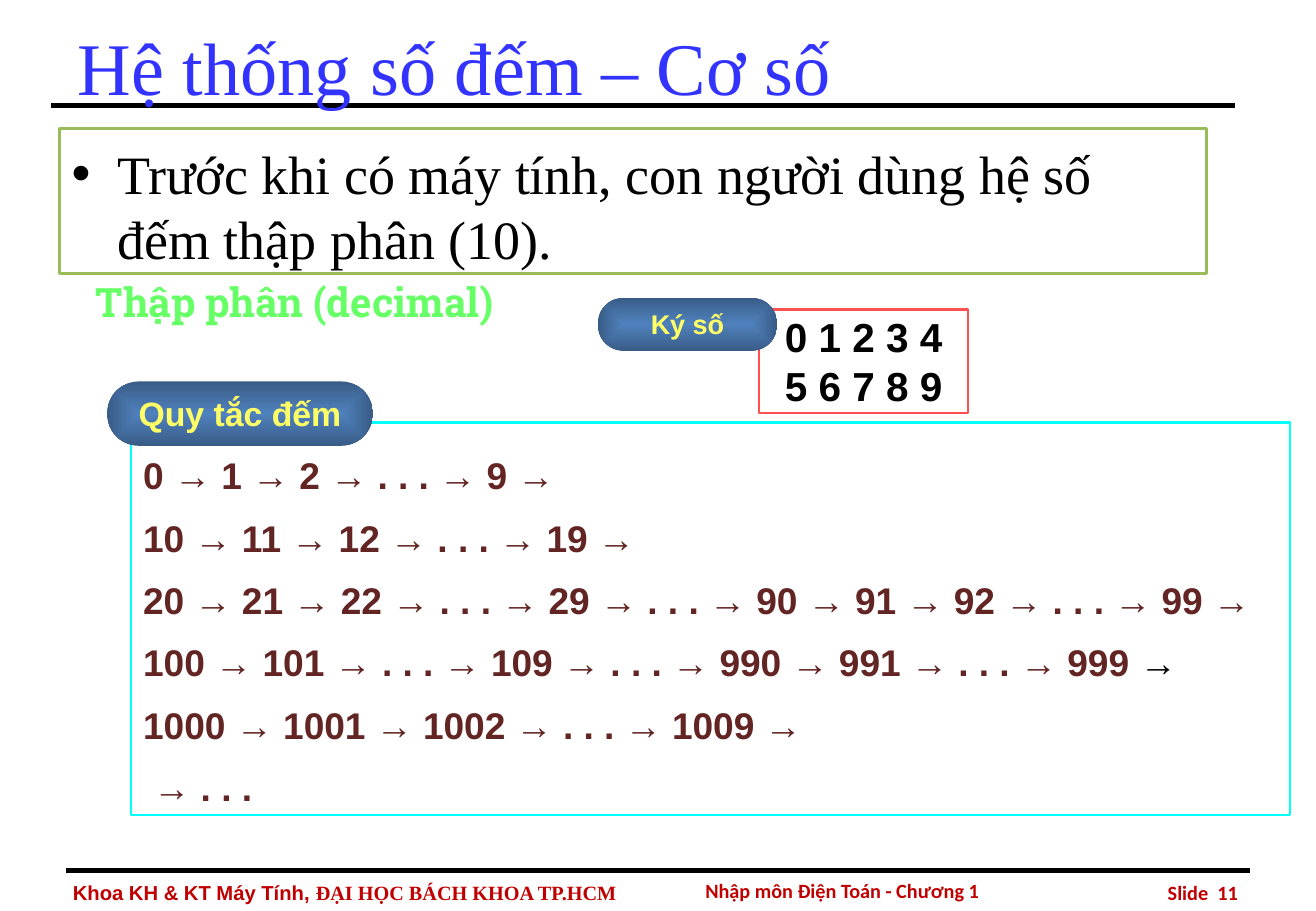
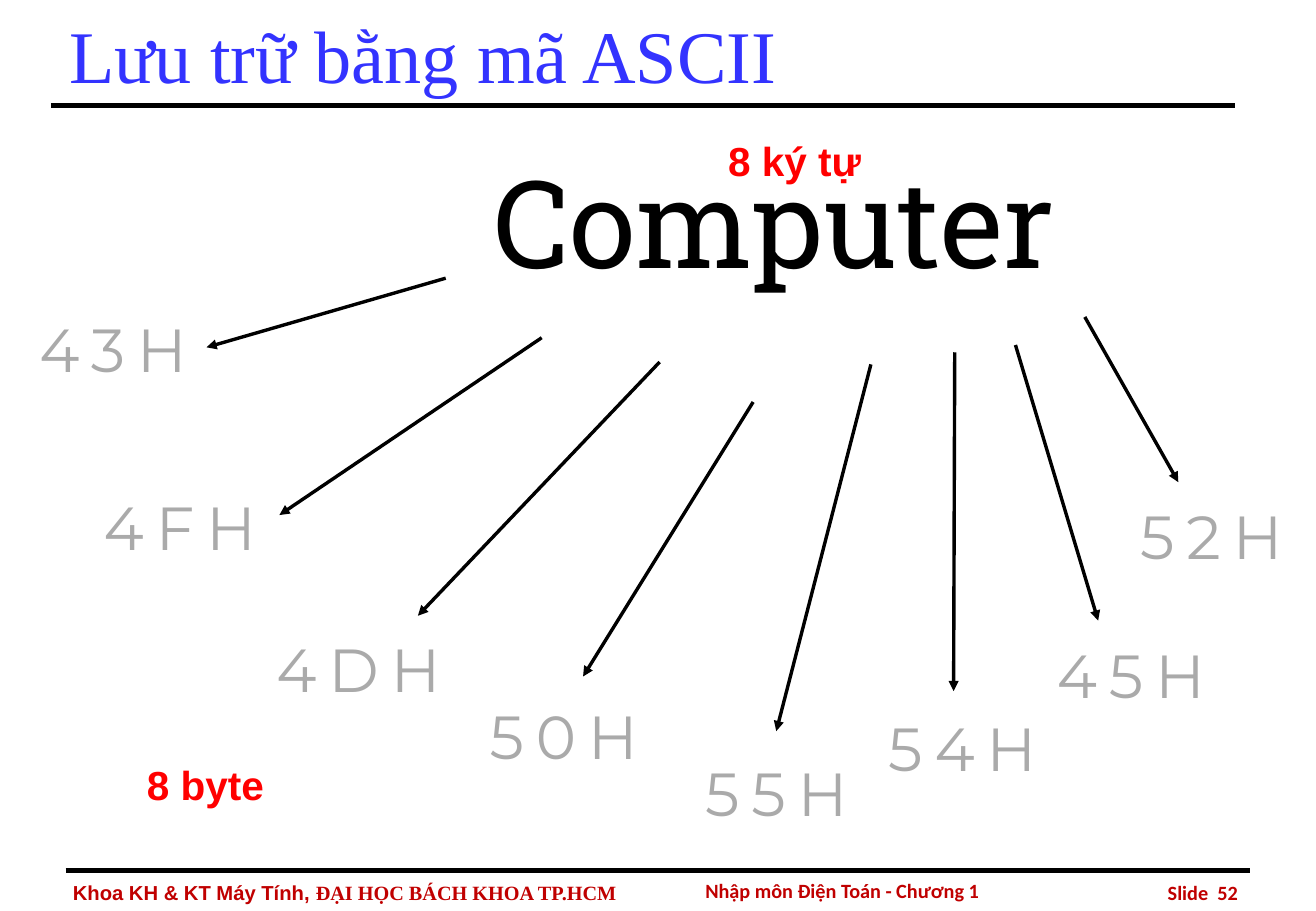
from dataclasses import dataclass
from typing import Optional

from lxml import etree
from pptx import Presentation
from pptx.dml import color as dml
from pptx.enum import shapes, text as txt
from pptx.oxml import ns
from pptx.util import Pt

BLACK = dml.RGBColor(0x00, 0x00, 0x00)
WHITE = dml.RGBColor(0xFF, 0xFF, 0xFF)
TITLE_BLUE = dml.RGBColor(0x33, 0x33, 0xFF)
FOOTER_RED = dml.RGBColor(0xC0, 0x00, 0x00)
CALLOUT_RED = dml.RGBColor(0xFF, 0x00, 0x00)
OLIVE = dml.RGBColor(0x9B, 0xBB, 0x59)
CORAL = dml.RGBColor(0xFF, 0x50, 0x50)
CYAN = dml.RGBColor(0x00, 0xFF, 0xFF)
MAROON = dml.RGBColor(0x63, 0x25, 0x23)
YELLOW = dml.RGBColor(0xFF, 0xFF, 0x66)
GREEN = dml.RGBColor(0x66, 0xFF, 0x66)
PILL_CENTRE = dml.RGBColor(0x4F, 0x81, 0xBD)
PILL_EDGE = dml.RGBColor(0x39, 0x5C, 0x87)
CODE_GREY = dml.RGBColor(0xAA, 0xAA, 0xAA)

SERIF, SANS, FOOTER_FACE = "Times New Roman", "Arial", "Calibri"
SLAB, CODE_FACE = "Roboto Slab", "Montserrat"
TIGHT = (1.4, 1.4, 1.4, 1.4)
NO_INSET = (0, 0, 0, 0)
INSET = (7.2, 3.6, 7.2, 3.6)
LEFT, CENTER, RIGHT = txt.PP_ALIGN.LEFT, txt.PP_ALIGN.CENTER, txt.PP_ALIGN.RIGHT
TOP, MIDDLE = txt.MSO_ANCHOR.TOP, txt.MSO_ANCHOR.MIDDLE


@dataclass(frozen=True)
class Box:
    left: float
    top: float
    width: float
    height: float

    def lengths(self) -> tuple:
        return Pt(self.left), Pt(self.top), Pt(self.width), Pt(self.height)


@dataclass(frozen=True)
class CharCode:
    label: str
    left: float
    top: float
    start: tuple
    tip: tuple


CHAR_CODES = (
    CharCode("43H", 28.1, 181.4, (264.2, 164.9), (122.4, 205.9)),
    CharCode("4FH", 67.7, 286.6, (321.1, 200.2), (165.6, 305.3)),
    CharCode("4DH", 173.5, 370.8, (391, 214.6), (247.7, 365)),
    CharCode("50H", 295.2, 410.4, (446.4, 238.3), (345.6, 401)),
    CharCode("55H", 421.2, 444.2, (516.2, 216), (460.1, 433.4)),
    CharCode("54H", 531.4, 417.6, (565.9, 208.8), (565.2, 409.7)),
    CharCode("45H", 631.4, 374.4, (601.9, 204.5), (650.9, 367.9)),
    CharCode("52H", 679, 292.3, (643, 187.9), (698.4, 285.8)),
)

COUNTING = (
    "0 → 1 → 2 → . . . → 9 →",
    "10 → 11 → 12 → . . . → 19 →",
    "20 → 21 → 22 → . . . → 29 → . . . → 90 → 91 → 92 → . . . → 99 →",
    "100 → 101 → . . . → 109 → . . . → 990 → 991 → . . . → 999 ",
    "1000 → 1001 → 1002 → . . . → 1009 →",
    " → . . .",
)


def write(frame, content: str, *, face: str, size: float, color, bold: bool = False,
          align=LEFT, spacing: Optional[float] = None, same_line: bool = False):
    paragraph = frame.paragraphs[-1]
    if paragraph.runs and not same_line:
        paragraph = frame.add_paragraph()
    paragraph.alignment = align
    paragraph.space_before = Pt(0)
    if spacing:
        paragraph.line_spacing = spacing
    run = paragraph.add_run()
    run.text = content
    run.font.name, run.font.size, run.font.bold = face, Pt(size), bold
    run.font.color.rgb = color
    return run


def set_frame(shape, insets: tuple = INSET, anchor=TOP, wrap: bool = True):
    frame = shape.text_frame
    frame.auto_size = txt.MSO_AUTO_SIZE.NONE
    frame.word_wrap = wrap
    frame.vertical_anchor = anchor
    (frame.margin_left, frame.margin_top,
     frame.margin_right, frame.margin_bottom) = map(Pt, insets)
    return frame


def label(slide, box: Box, insets: tuple = INSET, anchor=TOP, wrap: bool = True):
    return set_frame(slide.shapes.add_textbox(*box.lengths()), insets, anchor, wrap)


def outlined(slide, box: Box, color, insets: tuple = TIGHT):
    panel = slide.shapes.add_shape(shapes.MSO_SHAPE.RECTANGLE, *box.lengths())
    panel.shadow.inherit = False
    panel.fill.background()
    panel.line.color.rgb = color
    panel.line.width = Pt(1.5)
    return set_frame(panel, insets)


def set_gradient(fill, first, last) -> None:
    fill.gradient()
    for stop, color in zip(fill.gradient_stops, (first, last)):
        stop.color.rgb = color


def pill(slide, box: Box, content: str, size: float) -> None:
    badge = slide.shapes.add_shape(shapes.MSO_SHAPE.ROUNDED_RECTANGLE, *box.lengths())
    badge.adjustments[0] = 0.5
    badge.shadow.inherit = False
    badge.line.fill.background()
    set_gradient(badge.fill, PILL_CENTRE, PILL_EDGE)
    gradient = badge.element.spPr.find(ns.qn("a:gradFill"))
    gradient.remove(gradient.find(ns.qn("a:lin")))
    focus = etree.SubElement(gradient, ns.qn("a:path"), path="shape")
    etree.SubElement(focus, ns.qn("a:fillToRect"),
                     dict.fromkeys("ltrb", "50000"))
    write(set_frame(badge, TIGHT), content, face=SANS, size=size, color=YELLOW,
          bold=True, align=CENTER)


def line(slide, start: tuple, end: tuple, width: float, arrow: bool = False):
    stroke = slide.shapes.add_connector(
        shapes.MSO_CONNECTOR.STRAIGHT, *map(Pt, start + end))
    stroke.line.color.rgb = BLACK
    stroke.line.width = Pt(width)
    properties = stroke.element.spPr
    if arrow:
        etree.SubElement(properties.find(ns.qn("a:ln")), ns.qn("a:tailEnd"),
                         type="triangle")
    etree.SubElement(properties, ns.qn("a:effectLst"))
    return stroke


def dress_layout(layout, slide) -> None:
    present = {shape.shape_id for shape in slide.shapes}
    line(slide, (38.9, 516.2), (740.9, 516.2), 3)
    line(slide, (30.2, 62.6), (732.2, 62.6), 3)
    faculty = label(slide, Box(0, 518.4, 437, 21.6), (43.2, 3.6, 7.2, 3.6), MIDDLE)
    write(faculty, "Khoa KH & KT Máy Tính, ", face=SANS, size=12,
          color=FOOTER_RED, bold=True)
    write(faculty, "ĐẠI HỌC BÁCH KHOA TP.HCM", face=SERIF, size=12,
          color=FOOTER_RED, bold=True, same_line=True)
    course = label(slide, Box(375.8, 515.5, 247, 24.5), anchor=MIDDLE)
    write(course, "Nhập môn Điện Toán - Chương 1", face=FOOTER_FACE, size=12,
          color=FOOTER_RED, bold=True, align=CENTER)
    for shape in list(slide.shapes):
        if shape.shape_id not in present:
            layout.shapes.element.append(shape.element)


def head_and_number(slide, title: str, box: Box, number: int) -> None:
    heading = slide.shapes.title
    heading.left, heading.top, heading.width, heading.height = box.lengths()
    write(set_frame(heading, anchor=MIDDLE), title, face=SERIF, size=44, color=TITLE_BLUE)
    corner = label(slide, Box(640.1, 517.7, 100.8, 22.3), anchor=MIDDLE)
    write(corner, f"Slide  {number}", face=FOOTER_FACE, size=12, color=FOOTER_RED,
          bold=True, align=RIGHT)


def build_decimal(slide) -> None:
    head_and_number(slide, "Hệ thống số đếm – Cơ số", Box(38.9, 0, 637.2, 77.8), 11)
    history = slide.placeholders[1]
    history.left, history.top, history.width, history.height = Box(
        35.3, 76.3, 679.7, 85.7).lengths()
    history.fill.solid()
    history.fill.fore_color.rgb = WHITE
    history.line.color.rgb = OLIVE
    history.line.width = Pt(2)
    write(set_frame(history, (7.2, 7, 7.2, 3.6)),
          "Trước khi có máy tính, con người dùng hệ số đếm thập phân (10).",
          face=SERIF, size=32, color=BLACK)

    digits = outlined(slide, Box(450, 183.6, 123.8, 61.2), CORAL)
    for row in ("0 1 2 3 4", "5 6 7 8 9"):
        write(digits, row, face=SANS, size=24, color=BLACK, bold=True, align=CENTER)
    pill(slide, Box(354.2, 176.4, 106.6, 31.7), "Ký số", 16)

    counting = outlined(slide, Box(77.8, 250.6, 686.9, 232.6), CYAN, (7.2, 7.2, 1.4, 1.4))
    for row in COUNTING:
        write(counting, row, face=SANS, size=22, color=MAROON, bold=True, spacing=1.4)
        if row.endswith("999 "):
            write(counting, "→", face=SANS, size=22, color=BLACK, bold=True,
                  spacing=1.4, same_line=True)
    pill(slide, Box(63.4, 226.1, 157.7, 38.2), "Quy tắc đếm", 20)
    write(label(slide, Box(56.9, 164.2, 278.6, 28.8), NO_INSET), "Thập phân (decimal)",
          face=SLAB, size=24, color=GREEN, bold=True)


def build_ascii(slide) -> None:
    unused = slide.placeholders[1].element
    unused.getparent().remove(unused)
    head_and_number(slide, "Lưu trữ bằng mã ASCII", Box(33.8, 0, 702, 63.4), 52)
    write(label(slide, Box(263.5, 83.5, 390.2, 147.6), wrap=False), "Computer",
          face=SLAB, size=72, color=BLACK, align=CENTER)
    for code in CHAR_CODES:
        line(slide, code.start, code.tip, 2, arrow=True)
        run = write(label(slide, Box(code.left, code.top, 77.8, 51.1), wrap=False),
                    code.label, face=CODE_FACE, size=36, color=CODE_GREY, align=CENTER)
        set_gradient(run.font.fill, CODE_GREY, WHITE)
        run.font.fill.gradient_angle = 270
        run.font._element.set("spc", "720")
    for content, left, top in (("8 ký tự", 401.8, 80.6), ("8 byte", 52.6, 450.7)):
        write(label(slide, Box(left, top, 138.2, 27.4), NO_INSET), content, face=SANS,
              size=24, color=CALLOUT_RED, bold=True, align=CENTER)


def main() -> None:
    deck = Presentation()
    deck.slide_width, deck.slide_height = Pt(780), Pt(540)
    layout = deck.slide_layouts[1]
    decimal, ascii_codes = (deck.slides.add_slide(layout) for _ in range(2))
    dress_layout(layout, decimal)
    build_decimal(decimal)
    build_ascii(ascii_codes)
    deck.save("out.pptx")


if __name__ == "__main__":
    main()
